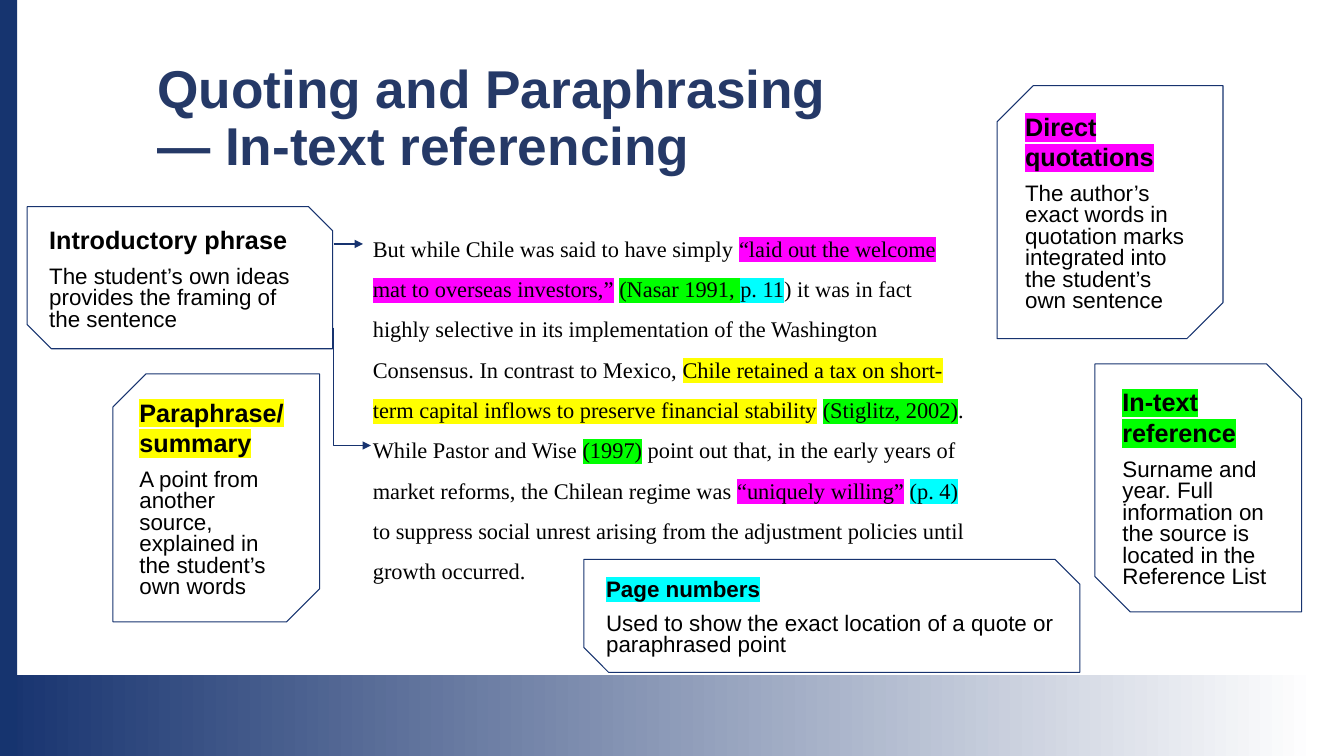
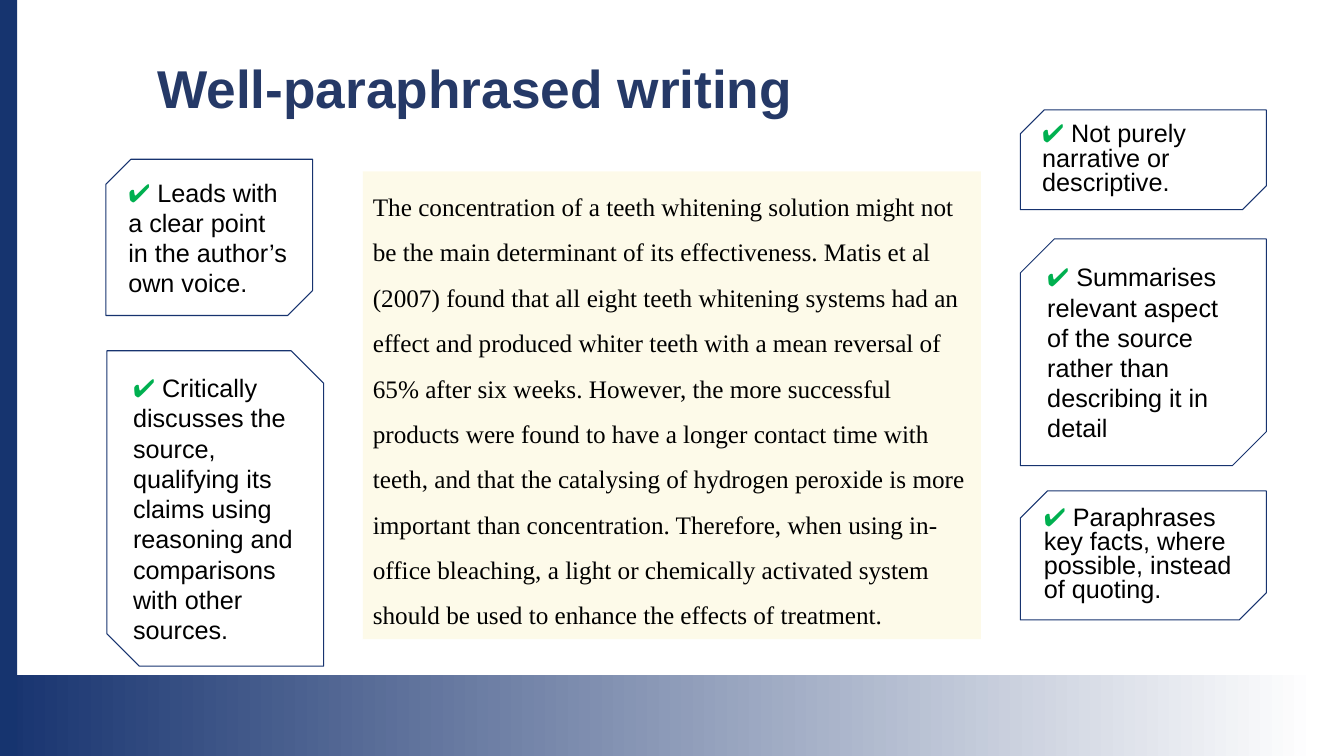
from pptx import Presentation
from pptx.util import Inches, Pt
from pptx.dml.color import RGBColor
from pptx.enum import shapes, text
from pptx.oxml import ns, xmlchemy

NAVY = RGBColor(0x17, 0x33, 0x6F)
EDGE = RGBColor(0x16, 0x34, 0x6F)
HEAD = RGBColor(0x25, 0x39, 0x67)
BLACK = RGBColor(0, 0, 0)
WHITE = RGBColor(255, 255, 255)
CREAM = RGBColor(0xFD, 0xF6, 0xD5)
TICK = RGBColor(0x00, 0xB0, 0x50)
PINK = RGBColor(255, 0, 255)
LIME = RGBColor(0, 255, 0)
CYAN = RGBColor(0, 255, 255)
GOLD = RGBColor(255, 255, 0)
SANS, SERIF = "Arial", "Times New Roman"

# Slide 1: passage as (words, highlight), cards as
# (place, snips, heading, heading size, highlight, words)
QUOTE_TITLE = "Quoting and Paraphrasing — In-text referencing"
QUOTE = [
    ("But while Chile was said to have simply ", None),
    ("“laid out the welcome mat to overseas investors,”", PINK),
    (" ", None),
    ("(Nasar 1991, ", LIME),
    ("p. 11", CYAN),
    (") it was in fact highly selective in its implementation of the "
     "Washington Consensus. In contrast to Mexico, ", None),
    ("Chile retained a tax on short-term capital inflows to preserve "
     "financial stability", GOLD),
    (" ", None),
    ("(Stiglitz, 2002)", LIME),
    (". While Pastor and Wise ", None),
    ("(1997)", LIME),
    (" point out that, in the early years of market reforms, the Chilean "
     "regime was ", None),
    ("“uniquely willing”", PINK),
    (" ", None),
    ("(p. 4)", CYAN),
    (" to suppress social unrest arising from the adjustment policies "
     "until growth occurred.", None),
]
LABELS = [
    ((9.89, 0.85, 2.24, 2.51), (0.16, 0), "Direct quotations", 18, PINK,
     "The author’s exact words in quotation marks integrated into the "
     "student’s own sentence"),
    ((5.79, 5.55, 4.92, 1.12), (0, 0.22), "Page numbers", 16, CYAN,
     "Used to show the exact location of a quote or paraphrased point"),
    ((1.12, 3.71, 2.05, 2.46), (0.16, 0), "Paraphrase/ summary", 18, GOLD,
     "A point from another source, explained in the student’s own words"),
    ((10.86, 3.61, 2.05, 2.46), (0, 0.17), "In-text reference", 18, LIME,
     "Surname and year. Full information on the source is located in the "
     "Reference List"),
    ((0.27, 2.05, 3.03, 1.41), (0, 0.17), "Introductory phrase", 18, None,
     "The student’s own ideas provides the framing of the sentence"),
]

# Slide 2: passage and ticked cards as (place, snips, line spacing, words)
GOOD_TITLE = "Well-paraphrased writing"
GOOD = [
    ("The concentration of a teeth whitening solution might not be the main "
     "determinant of its effectiveness. Matis et al (2007) found that all "
     "eight teeth whitening systems had an effect and produced whiter teeth "
     "with a mean reversal of 65% after six weeks. However, the more "
     "successful products were found to have a longer contact time with "
     "teeth, and that the catalysing of hydrogen peroxide is more important "
     "than concentration. Therefore, when using in-office bleaching, a light "
     "or chemically activated system should be used to enhance the effects "
     "of treatment.", None),
]
TICKS = [
    ((1.06, 3.48, 2.15, 3.13), (0, 0.15), None,
     "Critically discusses the source, qualifying its claims using reasoning "
     "and comparisons with other sources."),
    ((1.05, 1.58, 2.05, 1.55), (0.16, 0), None,
     "Leads with a clear point in the author’s own voice."),
    ((10.12, 4.87, 2.44, 1.28), (0.21, 0), 0.8,
     "Paraphrases key facts, where possible, instead of quoting."),
    ((10.12, 2.37, 2.44, 2.25), (0.15, 0), None,
     "Summarises relevant aspect of the source rather than describing it in "
     "detail"),
    ((10.12, 1.09, 2.44, 0.99), (0.24, 0), 0.8,
     "Not purely narrative or descriptive."),
]


def add_sub(node, tag, **attrs):
    sub = xmlchemy.OxmlElement(tag)
    for key, value in attrs.items():
        sub.set(key, value)
    node.append(sub)
    return sub


def add_run(para, words, size, face=SANS, color=BLACK, bold=False, mark=None):
    run = para.add_run()
    run.text = words
    font = run.font
    font.size, font.bold = Pt(size), bold
    font.color.rgb = color
    if mark is not None:
        glow = add_sub(run.font._element, "a:highlight")
        add_sub(glow, "a:srgbClr", val=str(mark))
    font.name = face


def add_form(slide, kind, place):
    form = slide.shapes.add_shape(kind, *map(Inches, place))
    form.shadow.inherit = False
    form.line.fill.background()
    return form


def add_card(slide, place, snips):
    card = add_form(slide, shapes.MSO_SHAPE.SNIP_2_DIAG_RECTANGLE, place)
    card.fill.background()
    card.line.color.rgb = NAVY
    card.line.width = Pt(0.75)
    for i, snip in enumerate(snips):
        card.adjustments[i] = snip
    frame = card.text_frame
    frame.word_wrap = True
    frame.vertical_anchor = text.MSO_ANCHOR.MIDDLE
    frame.paragraphs[0].alignment = text.PP_ALIGN.LEFT
    return frame


def add_passage(slide, top, height, parts, size, tint=None):
    box = add_form(slide, shapes.MSO_SHAPE.RECTANGLE, (3.6, top, 6.13, height))
    if tint is None:
        box.fill.background()
    else:
        box.fill.solid()
        box.fill.fore_color.rgb = tint
        shade = box.element.spPr.find(".//" + ns.qn("a:srgbClr"))
        add_sub(shade, "a:alpha", val="50000")
    frame = box.text_frame
    frame.word_wrap = True
    frame.vertical_anchor = text.MSO_ANCHOR.TOP
    para = frame.paragraphs[0]
    para.alignment = text.PP_ALIGN.LEFT
    para.line_spacing = 1.5
    for words, mark in parts:
        add_run(para, words, size, SERIF, mark=mark)


def add_arrow(slide, kind, ends):
    arrow = slide.shapes.add_connector(kind, *map(Inches, ends))
    arrow.line.color.rgb = NAVY
    arrow.line.width = Pt(1)
    add_sub(arrow.line._get_or_add_ln(), "a:tailEnd", type="triangle")
    add_sub(arrow.element.spPr, "a:effectLst")
    return arrow


def add_page(deck, title):
    slide = deck.slides.add_slide(deck.slide_layouts[5])
    para = slide.shapes.title.text_frame.paragraphs[0]
    para.alignment = text.PP_ALIGN.LEFT
    para.line_spacing = 0.9
    add_run(para, title, 38, color=HEAD, bold=True)
    return slide


def set_theme(deck, slide):
    # Title place, shared through the layout
    title = next(p for p in deck.slide_layouts[5].placeholders
                 if p.placeholder_format.type == shapes.PP_PLACEHOLDER.TITLE)
    title.left, title.top, title.width, title.height = map(
        Inches, (1.46, 0.57, 7.41, 0.96))
    title.text_frame.vertical_anchor = text.MSO_ANCHOR.TOP
    title.text_frame.auto_size = text.MSO_AUTO_SIZE.NONE

    # Bands, moved to the back of the master
    foot = add_form(slide, shapes.MSO_SHAPE.RECTANGLE, (0, 6.7, 13.33, 0.8))
    foot.fill.gradient()
    foot.fill.gradient_angle = 0
    fade = [(0, NAVY), (0.98, WHITE)]
    for stop, (spot, color) in zip(foot.fill.gradient_stops, fade):
        stop.position, stop.color.rgb = spot, color
    side = add_form(slide, shapes.MSO_SHAPE.RECTANGLE, (0, 0, 0.17, 7.5))
    side.fill.solid()
    side.fill.fore_color.rgb = EDGE
    tree = deck.slide_master.shapes[0].element.getparent()
    for i, band in enumerate((foot, side)):
        tree.insert(2 + i, band.element)


def main():
    deck = Presentation()
    deck.slide_width, deck.slide_height = Inches(13.33), Inches(7.5)

    # Slide 1
    slide = add_page(deck, QUOTE_TITLE)
    set_theme(deck, slide)
    add_passage(slide, 2.15, 3.74, QUOTE, 16)
    for place, snips, head, size, mark, words in LABELS:
        frame = add_card(slide, place, snips)
        add_run(frame.paragraphs[0], head, size, bold=True, mark=mark)
        para = frame.add_paragraph()
        para.alignment = text.PP_ALIGN.LEFT
        para.line_spacing = 0.8
        para.space_before = Pt(9)
        add_run(para, words, 16)
    kinds = shapes.MSO_CONNECTOR
    add_arrow(slide, kinds.STRAIGHT, (3.31, 2.42, 3.6, 2.42))
    # One-bend arrow: drawn flat, then turned upright
    bend = add_arrow(slide, kinds.ELBOW, (4.08, 3.65, 2.91, 4.02))
    props = bend.element.spPr
    props.find(ns.qn("a:xfrm")).set("rot", str(270 * 60000))
    props.find(ns.qn("a:prstGeom")).set("prst", "bentConnector2")

    # Slide 2
    slide = add_page(deck, GOOD_TITLE)
    add_passage(slide, 1.7, 4.64, GOOD, 18, CREAM)
    for place, snips, gap, words in TICKS:
        para = add_card(slide, place, snips).paragraphs[0]
        para.line_spacing = gap
        add_run(para, "✔ ", 18, color=TICK)
        add_run(para, words, 18)

    deck.save("out.pptx")


if __name__ == "__main__":
    main()
